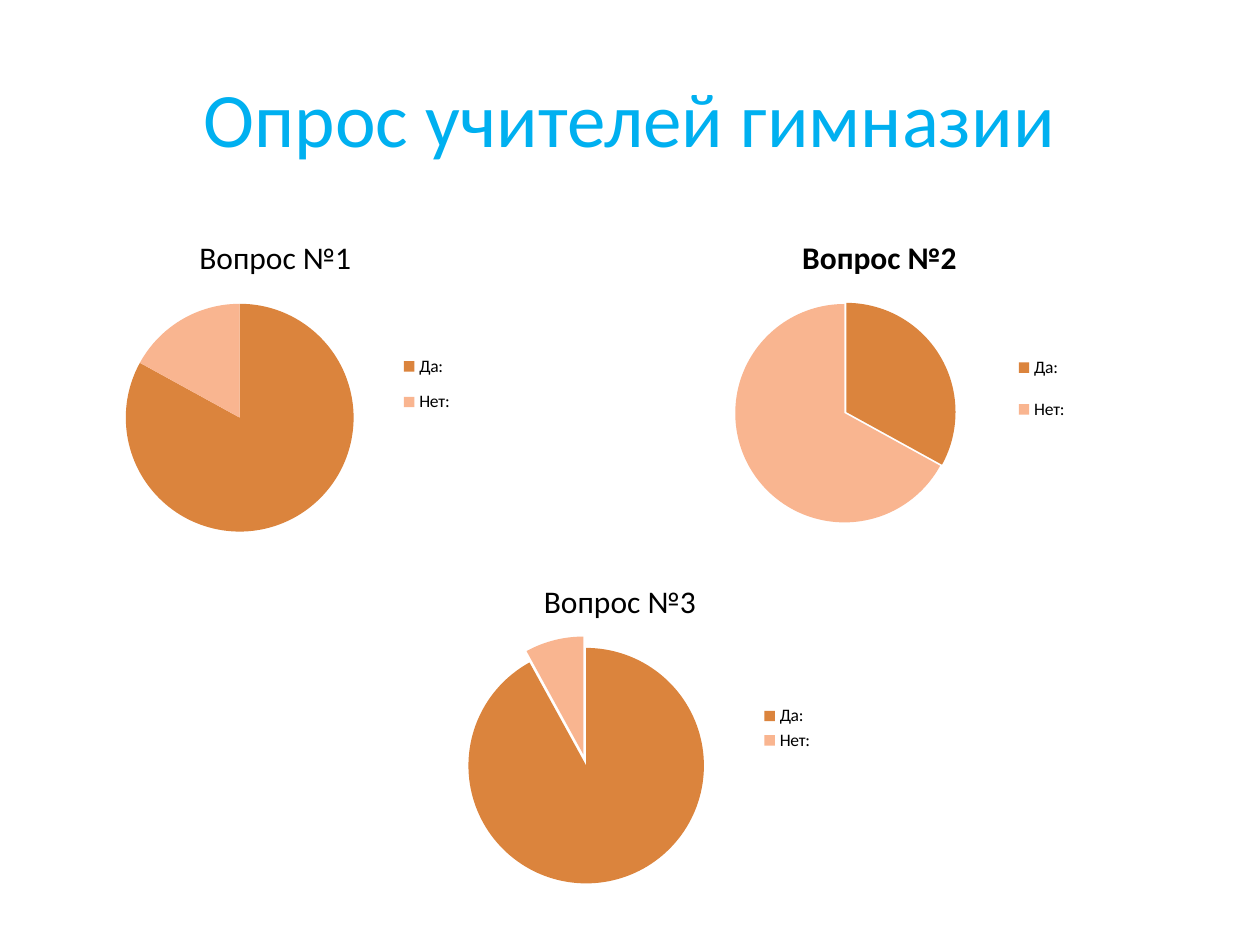
import lxml.etree
import pptx
import pptx.chart.data
import pptx.dml.color
import pptx.enum.chart
import pptx.enum.text
import pptx.oxml.ns
import pptx.util

COLORS = {"title": "00B0F0", "text": "000000", "yes": "DB843D", "no": "F9B590"}
ANSWERS = {"Да:": "yes", "Нет:": "no"}


class SurveySlide:
    """Holds the text style and the slide, and adds its title and pie charts."""

    def __init__(self, slide, font="Calibri"):
        self.slide = slide
        self.font = font

    def style(self, font, size, color="text", bold=False):
        font.name = self.font
        font.size = pptx.util.Pt(size)
        font.bold = bold
        font.color.rgb = pptx.dml.color.RGBColor.from_string(COLORS[color])

    def title(self, text, box):
        title = self.slide.shapes.title
        title.left, title.top, title.width, title.height = map(pptx.util.Pt, box)
        frame = title.text_frame
        frame.text = text
        frame.vertical_anchor = pptx.enum.text.MSO_ANCHOR.MIDDLE
        heading = frame.paragraphs[0]
        heading.alignment = pptx.enum.text.PP_ALIGN.CENTER
        self.style(heading.font, 44, "title")

    def place(self, parent, index, fractions, inner=False):
        qn = pptx.oxml.ns.qn
        for old in parent.findall(qn("c:layout")):
            parent.remove(old)
        layout = lxml.etree.Element(qn("c:layout"))
        manual = lxml.etree.SubElement(layout, qn("c:manualLayout"))
        settings = [("layoutTarget", "inner")] if inner else []
        settings += [("xMode", "edge"), ("yMode", "edge")]
        settings += zip("xywh", fractions)
        for name, value in settings:
            lxml.etree.SubElement(manual, qn("c:" + name)).set("val", str(value))
        parent.insert(index, layout)

    def explode(self, chart, percent):
        qn = pptx.oxml.ns.qn
        for point in chart.element.iter(qn("c:dPt")):
            explosion = lxml.etree.Element(qn("c:explosion"))
            explosion.set("val", str(percent))
            point.find(qn("c:spPr")).addprevious(explosion)

    def pie(self, question, values, box, pie_area, legend_area, bold=False, explosion=0):
        answers = pptx.chart.data.CategoryChartData()
        answers.categories = list(ANSWERS)
        answers.add_series(question, values)
        chart = self.slide.shapes.add_chart(
            pptx.enum.chart.XL_CHART_TYPE.PIE, *map(pptx.util.Pt, box), answers
        ).chart
        self.style(chart.font, 10)

        chart.has_title = True
        heading = chart.chart_title.text_frame
        heading.text = question
        self.style(heading.paragraphs[0].font, 18, bold=bold)
        chart.chart_title.include_in_layout = False

        chart.has_legend = True
        chart.legend.position = pptx.enum.chart.XL_LEGEND_POSITION.RIGHT
        chart.legend.include_in_layout = False
        self.style(chart.legend.font, 10)

        plot = chart.plots[0]
        plot.vary_by_categories = True
        for index, color in enumerate(ANSWERS.values()):
            wedge = plot.series[0].points[index].format
            wedge.fill.solid()
            wedge.fill.fore_color.rgb = pptx.dml.color.RGBColor.from_string(COLORS[color])
            wedge.line.fill.background()
        if explosion:
            self.explode(chart, explosion)

        qn = pptx.oxml.ns.qn
        self.place(chart.element.find(".//" + qn("c:plotArea")), 0, pie_area, inner=True)
        self.place(chart.element.find(".//" + qn("c:legend")), 1, legend_area)


def main():
    deck = pptx.Presentation()
    deck.slide_width, deck.slide_height = pptx.util.Pt(720), pptx.util.Pt(540)
    survey = SurveySlide(deck.slides.add_slide(deck.slide_layouts[5]))
    survey.title("Опрос учителей гимназии", (36, 21.6, 648, 90))
    survey.pie("Вопрос №1", (83, 17), (50.4, 123.84, 213.84, 191.52),
               (0.1, 0.26, 0.61, 0.68), (0.83, 0.37, 0.15, 0.26))
    survey.pie("Вопрос №2", (33, 67), (388.08, 123.84, 228.96, 183.6),
               (0.14, 0.27, 0.55, 0.68), (0.83, 0.37, 0.15, 0.33),
               bold=True, explosion=1)
    survey.pie("Вопрос №3", (92, 8), (236.16, 320.4, 236.16, 191.52),
               (0.13, 0.24, 0.57, 0.71), (0.84, 0.42, 0.13, 0.16),
               explosion=5)
    deck.save("out.pptx")


if __name__ == "__main__":
    main()
